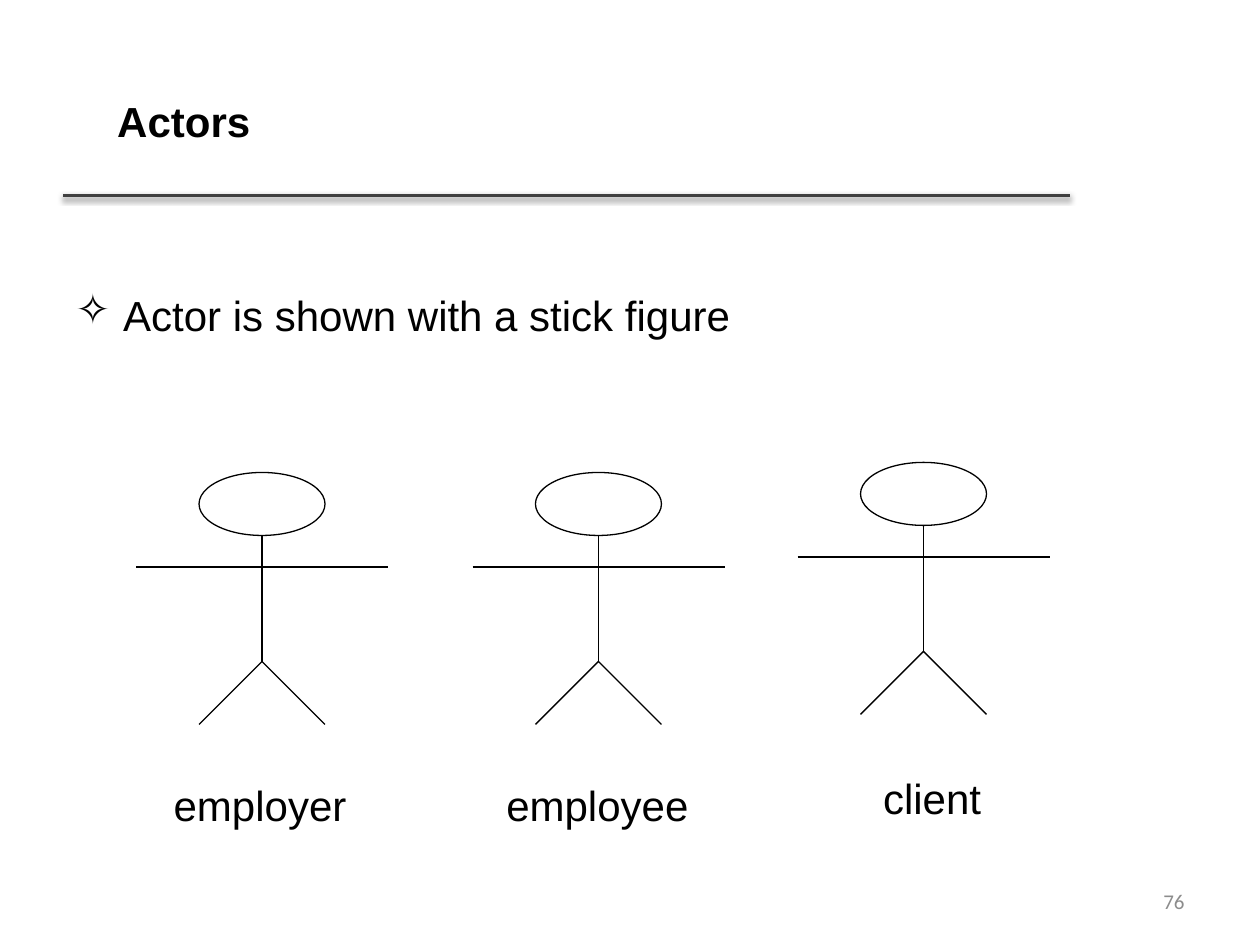
import pptx
import pptx.util
import pptx.dml.color
import pptx.enum.shapes
import pptx.enum.text
import pptx.oxml
import pptx.oxml.ns
from lxml import etree

W, H = 10, 7.5
BLACK, RULE, GREY = "000000", "404040", "8C8C8C"
TITLE = "Actors"
POINT = "Actor is shown with a stick figure"
PAGE = "76"
ACTORS = [
    {"name": "employer", "x": 2.08, "y": 3.75, "label": (1.28, 6.14, 1.59)},
    {"name": "employee", "x": 4.75, "y": 3.75, "label": (3.92, 6.14, 1.66)},
    {"name": "client", "x": 7.33, "y": 3.67, "label": (6.91, 6.08, 0.98)},
]
HEAD_H, BODY_H, LEG_H, ARM_DROP = 0.5, 1, 0.5, 0.25
HALF_HEAD, HALF_ARMS = 0.5, 1

Inches, Pt = pptx.util.Inches, pptx.util.Pt
ALIGN, ANCHOR = pptx.enum.text.PP_ALIGN, pptx.enum.text.MSO_ANCHOR
SHADOW = (
    '<a:outerShdw blurRad="39370" dist="20320" dir="5400000" rotWithShape="0">'
    '<a:srgbClr val="000000"><a:alpha val="38000"/></a:srgbClr></a:outerShdw>'
)


def rgb(color):
    return pptx.dml.color.RGBColor.from_string(color)


def write(s, text, size=24, font="Arial", color=BLACK, bold=False,
          align=ALIGN.LEFT, anchor=ANCHOR.TOP, wrap=True):
    tf = s.text_frame
    tf.word_wrap = wrap
    tf.vertical_anchor = anchor
    p = tf.paragraphs[0]
    p.alignment = align
    r = p.add_run()
    r.text = text
    r.font.size, r.font.name, r.font.bold = Pt(size), font, bold
    r.font.color.rgb = rgb(color)
    return p


def text_box(slide, box, text, **fmt):
    s = slide.shapes.add_textbox(*map(Inches, box))
    return s, write(s, text, **fmt)


def stroke(s, color=BLACK, width=0.75):
    s.line.color.rgb = rgb(color)
    s.line.width = Pt(width)


def line(shapes, start, end, effect="", **style):
    s = shapes.add_connector(pptx.enum.shapes.MSO_CONNECTOR.STRAIGHT,
                             *map(Inches, start + end))
    stroke(s, **style)
    ns = pptx.oxml.ns.nsdecls("a")
    s._element.spPr.append(
        pptx.oxml.parse_xml(f"<a:effectLst {ns}>{effect}</a:effectLst>"))


def outline(s):
    s.shadow.inherit = False
    s.fill.background()
    stroke(s)


def stick_figure(slide, x, y):
    shapes = slide.shapes.add_group_shape().shapes
    neck, hip = y + HEAD_H, y + HEAD_H + BODY_H
    arms, feet = neck + ARM_DROP, hip + LEG_H
    outline(shapes.add_shape(
        pptx.enum.shapes.MSO_SHAPE.OVAL,
        *map(Inches, (x - HALF_HEAD, y, 2 * HALF_HEAD, HEAD_H))))
    line(shapes, (x, neck), (x, hip))
    left, middle, right = map(Inches, (x - HALF_HEAD, x, x + HALF_HEAD))
    top, bottom = Inches(hip), Inches(feet)
    legs = shapes.build_freeform(left, bottom)
    legs.add_line_segments([(middle, top), (right, bottom)], close=False)
    outline(legs.convert_to_shape())
    line(shapes, (x - HALF_ARMS, arms), (x + HALF_ARMS, arms))


def main():
    prs = pptx.Presentation()
    prs.slide_width, prs.slide_height = Inches(W), Inches(H)
    slide = prs.slides.add_slide(prs.slide_layouts[5])

    s = slide.shapes.title
    s.left, s.top, s.width, s.height = map(Inches, (0.74, 0.52, 8.16, 0.88))
    write(s, TITLE, bold=True, anchor=ANCHOR.MIDDLE)
    s.text_frame.auto_size = pptx.enum.text.MSO_AUTO_SIZE.NONE
    s.text_frame.margin_left = Inches(0.19)
    line(slide.shapes, (0.5, 1.55), (8.49, 1.55), effect=SHADOW,
         color=RULE, width=2)

    s, p = text_box(slide, (0.5, 2.17, 9, 4.83), POINT)
    pPr = p._p.get_or_add_pPr()
    pPr.set("marL", str(Inches(0.38)))
    pPr.set("indent", str(Inches(-0.38)))
    etree.SubElement(pPr, pptx.oxml.ns.qn("a:buChar"), char="✧")
    p.line_spacing = 1.2
    p.space_after = Pt(6)

    text_box(slide, (7.17, 6.95, 2.33, 0.4), PAGE, size=12, font="Calibri",
             color=GREY, align=ALIGN.RIGHT, anchor=ANCHOR.MIDDLE)

    for actor in ACTORS:
        stick_figure(slide, actor["x"], actor["y"])
        s, p = text_box(slide, (*actor["label"], 0.5), actor["name"], wrap=False)
        s.text_frame.auto_size = pptx.enum.text.MSO_AUTO_SIZE.SHAPE_TO_FIT_TEXT

    prs.save("out.pptx")


if __name__ == "__main__":
    main()
